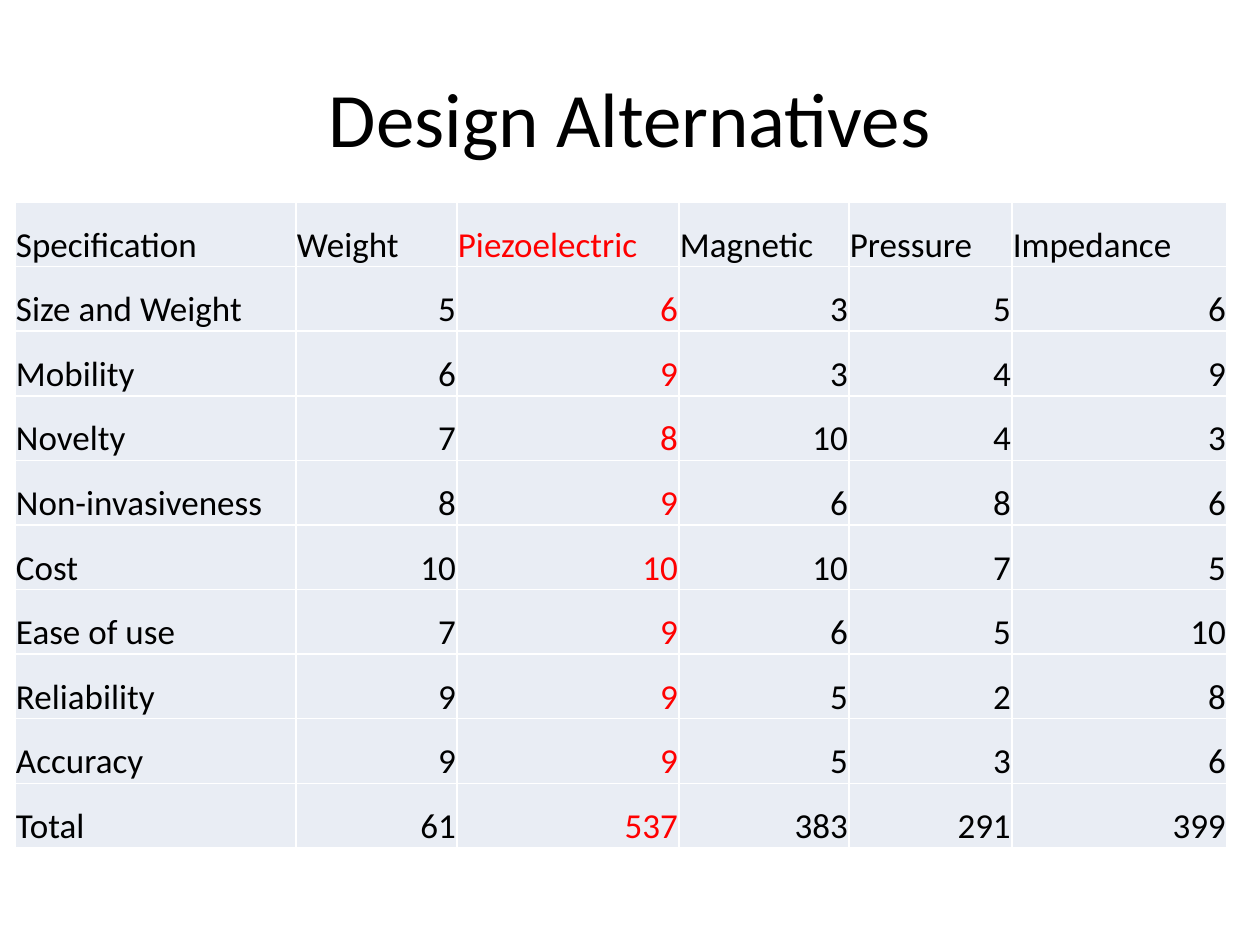
from dataclasses import dataclass

from lxml.etree import SubElement
from pptx import Presentation
from pptx.dml.color import RGBColor
from pptx.enum.text import MSO_VERTICAL_ANCHOR as Anchor, PP_PARAGRAPH_ALIGNMENT as Align
from pptx.oxml.ns import qn
from pptx.util import Emu, Pt

EMU_PER_PX = 914400 / 126
FONT = "Calibri"
COLORS = {"text": "000000", "chosen": "FF0000", "cell": "E9EDF4", "border": "FFFFFF"}
BORDER_SIDES = ("a:lnL", "a:lnR", "a:lnT", "a:lnB")
TABLE_LEFT, TABLE_TOP, TABLE_HEIGHT = 15, 202, 646


@dataclass(frozen=True)
class Column:
    heading: str
    width: int
    values: tuple
    color: str = "text"


CRITERIA = (
    "Size and Weight", "Mobility", "Novelty", "Non-invasiveness", "Cost",
    "Ease of use", "Reliability", "Accuracy", "Total",
)
COLUMNS = (
    Column("Specification", 281, CRITERIA),
    Column("Weight", 161, (5, 6, 7, 8, 10, 7, 9, 9, 61)),
    Column("Piezoelectric", 222, (6, 9, 8, 9, 10, 9, 9, 9, 537), "chosen"),
    Column("Magnetic", 170, (3, 3, 10, 6, 10, 6, 5, 5, 383)),
    Column("Pressure", 163, (5, 4, 4, 8, 7, 5, 2, 3, 291)),
    Column("Impedance", 215, (6, 9, 3, 6, 5, 10, 8, 6, 399)),
)


def px(length: int) -> Emu:
    return Emu(round(length * EMU_PER_PX))


def add_span(para, text: str, size: int, color: str) -> None:
    span = para.add_run()
    span.text = text
    span.font.name = FONT
    span.font.size = Pt(size)
    span.font.color.rgb = RGBColor.from_string(COLORS[color])


def add_title(page, text: str) -> None:
    box = page.shapes.add_textbox(px(63), px(38), px(1134), px(157))
    frame = box.text_frame
    frame.word_wrap = True
    frame.vertical_anchor = Anchor.MIDDLE
    para = frame.paragraphs[0]
    para.alignment = Align.CENTER
    add_span(para, text, 44, "text")


def set_borders(cell) -> None:
    properties = cell._tc.get_or_add_tcPr()
    for side in BORDER_SIDES:
        line = SubElement(properties, qn(side), w=str(Pt(1)))
        fill = SubElement(line, qn("a:solidFill"))
        SubElement(fill, qn("a:srgbClr"), val=COLORS["border"])


def fill_cell(cell, value: str | int, color: str) -> None:
    set_borders(cell)
    cell.fill.solid()
    cell.fill.fore_color.rgb = RGBColor.from_string(COLORS["cell"])
    cell.margin_left = cell.margin_top = cell.margin_right = px(1)
    cell.margin_bottom = px(0)
    cell.vertical_anchor = Anchor.BOTTOM
    para = cell.text_frame.paragraphs[0]
    para.alignment = Align.RIGHT if isinstance(value, int) else Align.LEFT
    add_span(para, str(value), 20, color)


def add_score_table(page, columns: tuple[Column, ...]) -> None:
    width = sum(column.width for column in columns)
    table = page.shapes.add_table(
        len(CRITERIA) + 1, len(columns),
        px(TABLE_LEFT), px(TABLE_TOP), px(width), px(TABLE_HEIGHT),
    ).table
    table.first_row = False
    table.horz_banding = False
    for column_index, column in enumerate(columns):
        table.columns[column_index].width = px(column.width)
        for row_index, value in enumerate((column.heading, *column.values)):
            fill_cell(table.cell(row_index, column_index), value, column.color)


def main() -> None:
    deck = Presentation()
    deck.slide_width, deck.slide_height = px(1260), px(945)
    page = deck.slides.add_slide(deck.slide_layouts[6])
    add_title(page, "Design Alternatives")
    add_score_table(page, COLUMNS)
    deck.save("out.pptx")


if __name__ == "__main__":
    main()
